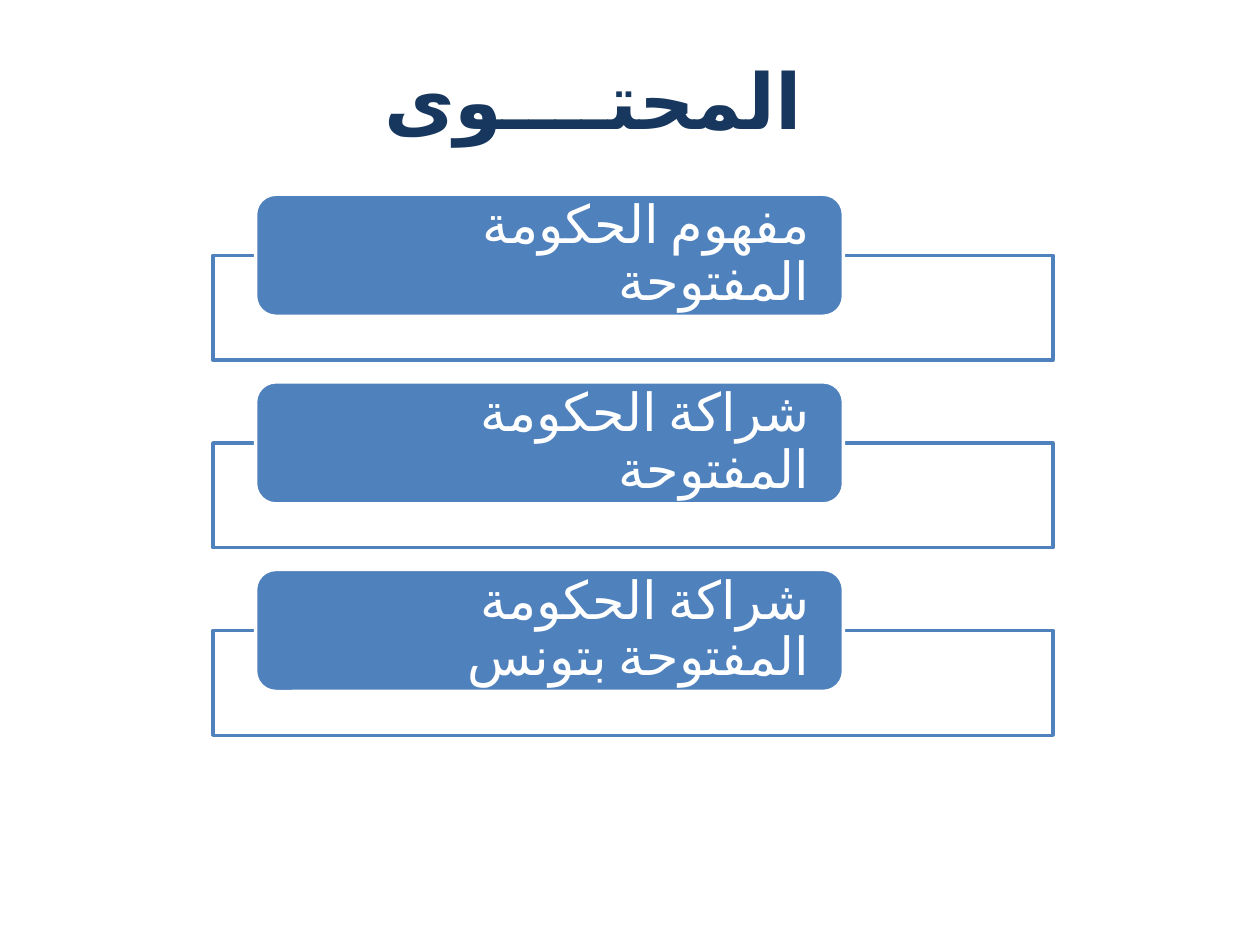
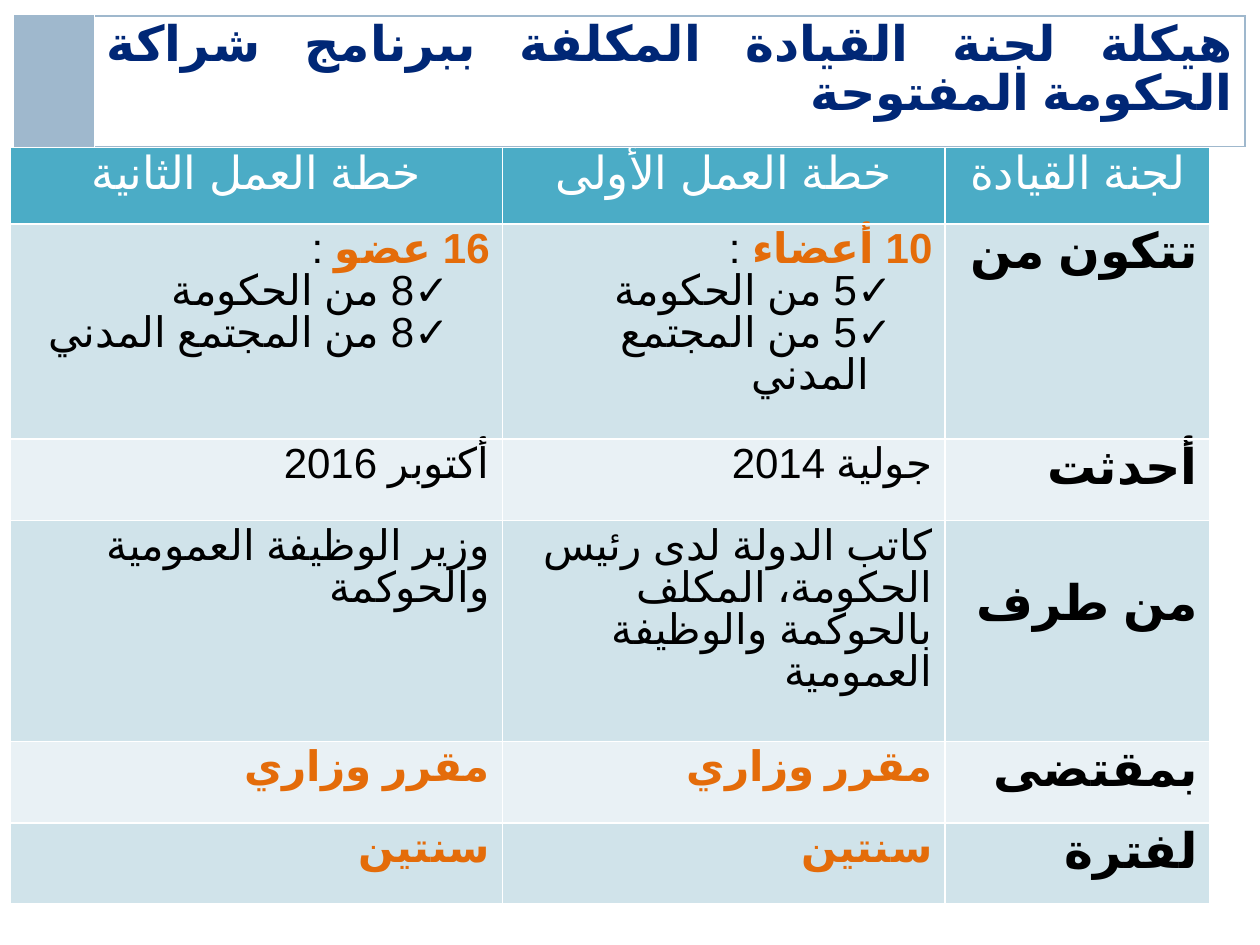
from lxml.etree import SubElement
from pptx import Presentation
from pptx.dml.color import RGBColor
from pptx.enum.lang import MSO_LANGUAGE_ID as Language
from pptx.enum.shapes import MSO_SHAPE as Shape
from pptx.enum.text import MSO_ANCHOR as Anchor, MSO_AUTO_SIZE as AutoSize, PP_ALIGN as Align
from pptx.oxml.ns import qn
from pptx.util import Pt

WHITE = RGBColor(0xFF, 0xFF, 0xFF)
BLACK = RGBColor(0, 0, 0)
NAVY = RGBColor(0x17, 0x37, 0x5E)
DEEP_BLUE = RGBColor(0x00, 0x27, 0x76)
BLUE = RGBColor(0x4F, 0x81, 0xBD)
STEEL = RGBColor(0x9F, 0xB8, 0xCD)
TEAL = RGBColor(0x4B, 0xAC, 0xC6)
ORANGE = RGBColor(0xE4, 0x6C, 0x0A)
BANDS = (RGBColor(0xD0, 0xE3, 0xEA), RGBColor(0xE9, 0xF1, 0xF5))

CONTENTS_TITLE = "المحتــــوى"
TOPICS = ["مفهوم الحكومة المفتوحة", "شراكة الحكومة المفتوحة", "شراكة الحكومة المفتوحة بتونس"]

COMMITTEE_TITLE = "هيكلة لجنة القيادة المكلفة ببرنامج شراكة الحكومة المفتوحة"
HEADERS = ["خطة العمل الثانية", "خطة العمل الأولى", "لجنة القيادة"]
PLAIN, STRONG = (BLACK, False), (ORANGE, True)
ROWS = [
    ([[("16 عضو ", STRONG), (":", PLAIN)], "8 من الحكومة", "8 من المجتمع المدني"],
     [[("10 أعضاء ", STRONG), (":", PLAIN)], "5 من الحكومة", "5 من المجتمع المدني"],
     "تتكون من "),
    ([[("أكتوبر 2016", PLAIN)]], [[("جولية 2014", PLAIN)]], "أحدثت "),
    ([[("وزير الوظيفة العمومية والحوكمة ", PLAIN)]],
     [[("كاتب الدولة لدى رئيس الحكومة، المكلف بالحوكمة والوظيفة العمومية", PLAIN)]],
     "من طرف"),
    ([[("مقرر وزاري", STRONG)]], [[("مقرر وزاري", STRONG)]], "بمقتضى"),
    ([[("سنتين", STRONG)]], [[("سنتين", STRONG)]], "لفترة"),
]
LOWERED_LABEL = "من طرف"
COLUMN_WIDTHS = (281, 253, 151.5)
ROW_HEIGHTS = (43.5, 123.1, 46.5, 126.3, 46.6, 46.4)


def format_span(span, size, colour, bold=False, font="Calibri", script_font="Arial"):
    span.font.size = Pt(size)
    span.font.bold = bold
    span.font.color.rgb = colour
    span.font.name = font
    span.font.language_id = Language.ARABIC_TUNISIA
    SubElement(span.font._element, qn("a:cs")).set("typeface", script_font)


def format_para(para, align=Align.RIGHT, spacing=None):
    para.alignment = align
    para.line_spacing = spacing
    para._p.get_or_add_pPr().set("rtl", "1")


def write_para(para, spans, size, align=Align.RIGHT, font="Calibri"):
    format_para(para, align, Pt(size))
    for text, (colour, bold) in spans:
        span = para.add_run()
        span.text = text
        format_span(span, size, colour, bold, font)


def add_check(para):
    para.level = 1
    properties = para._p.get_or_add_pPr()
    properties.set("marL", str(Pt(36)))
    properties.set("indent", str(-Pt(13)))
    SubElement(properties, qn("a:buFont")).set("typeface", "Arial")
    SubElement(properties, qn("a:buChar")).set("char", "✓")


def set_borders(cell, colour, sides="LRTB"):
    properties = cell._tc.get_or_add_tcPr()
    for position, side in enumerate(sides):
        line = properties.makeelement(qn(f"a:ln{side}"), {"w": str(Pt(1))})
        fill = SubElement(line, qn("a:solidFill"))
        SubElement(fill, qn("a:srgbClr")).set("val", str(colour))
        properties.insert(position, line)


def fill_cell(cell, colour):
    cell.fill.solid()
    cell.fill.fore_color.rgb = colour


def add_grid(page, left, top, widths, heights):
    frame = page.shapes.add_table(len(heights), len(widths), Pt(left), Pt(top),
                                  Pt(sum(widths)), Pt(sum(heights)))
    table = frame.table
    table.first_row = table.horz_banding = False
    for column, width in zip(table.columns, widths):
        column.width = Pt(width)
    for row, height in zip(table.rows, heights):
        row.height = Pt(height)
    return table


def add_box(page, kind, left, top, width, height, fill, line):
    box = page.shapes.add_shape(kind, Pt(left), Pt(top), Pt(width), Pt(height))
    box.shadow.inherit = False
    box.fill.solid()
    box.fill.fore_color.rgb = fill
    box.line.color.rgb = line
    box.line.width = Pt(2)
    return box


def build_contents(deck):
    page = deck.slides.add_slide(deck.slide_layouts[5])
    title = page.shapes.title
    title.left, title.top, title.width, title.height = Pt(203), Pt(26), Pt(272), Pt(60.5)
    frame = title.text_frame
    frame.text = CONTENTS_TITLE
    frame.auto_size = AutoSize.NONE
    frame.vertical_anchor = Anchor.MIDDLE
    frame.paragraphs[0].alignment = Align.CENTER
    format_span(frame.paragraphs[0].runs[0], 44, NAVY, True, "Arial")

    for index, topic in enumerate(TOPICS):
        top = 111 + index * 107.2
        add_box(page, Shape.RECTANGLE, 121.7, top + 35, 480, 59.8, WHITE, BLUE)
        label = add_box(page, Shape.ROUNDED_RECTANGLE, 146, top, 336, 69.8, BLUE, WHITE)
        frame = label.text_frame
        frame.text = topic
        frame.word_wrap = True
        frame.vertical_anchor = Anchor.MIDDLE
        frame.margin_left = frame.margin_right = Pt(16)
        frame.margin_top = frame.margin_bottom = 0
        format_para(frame.paragraphs[0], spacing=0.9)
        format_span(frame.paragraphs[0].runs[0], 30, WHITE, script_font="Calibri")


def build_committee(deck):
    page = deck.slides.add_slide(deck.slide_layouts[6])
    table = add_grid(page, 6, 84.4, COLUMN_WIDTHS, ROW_HEIGHTS)
    for column, header in enumerate(HEADERS):
        cell = table.cell(0, column)
        write_para(cell.text_frame.paragraphs[0], [(header, (WHITE, False))], 26, Align.CENTER)
        fill_cell(cell, TEAL)
        set_borders(cell, WHITE)

    for index, (second, first, label) in enumerate(ROWS):
        contents = ((second, 24), (first, 24), ([[(label, (BLACK, True))]], 28))
        for column, (paras, size) in enumerate(contents):
            cell = table.cell(index + 1, column)
            frame = cell.text_frame
            for number, content in enumerate(paras):
                para = frame.add_paragraph() if number else frame.paragraphs[0]
                checked = isinstance(content, str)
                write_para(para, [(content, PLAIN)] if checked else content, size)
                if checked:
                    add_check(para)
            fill_cell(cell, BANDS[index % 2])
            set_borders(cell, WHITE)
        if label == LOWERED_LABEL:
            cell.margin_top = Pt(35)

    banner = add_grid(page, 8.6, 9.2, (45.4, 657.4), (74.4,))
    accent, heading = banner.cell(0, 0), banner.cell(0, 1)
    fill_cell(accent, STEEL)
    set_borders(accent, STEEL, "LTB")
    write_para(heading.text_frame.paragraphs[0], [(COMMITTEE_TITLE, (DEEP_BLUE, True))],
               28, Align.JUSTIFY, "Arial")
    heading.fill.background()
    set_borders(heading, STEEL, "RTB")


def main():
    deck = Presentation()
    deck.slide_width, deck.slide_height = Pt(720), Pt(540)
    build_contents(deck)
    build_committee(deck)
    deck.save("out.pptx")


if __name__ == "__main__":
    main()
